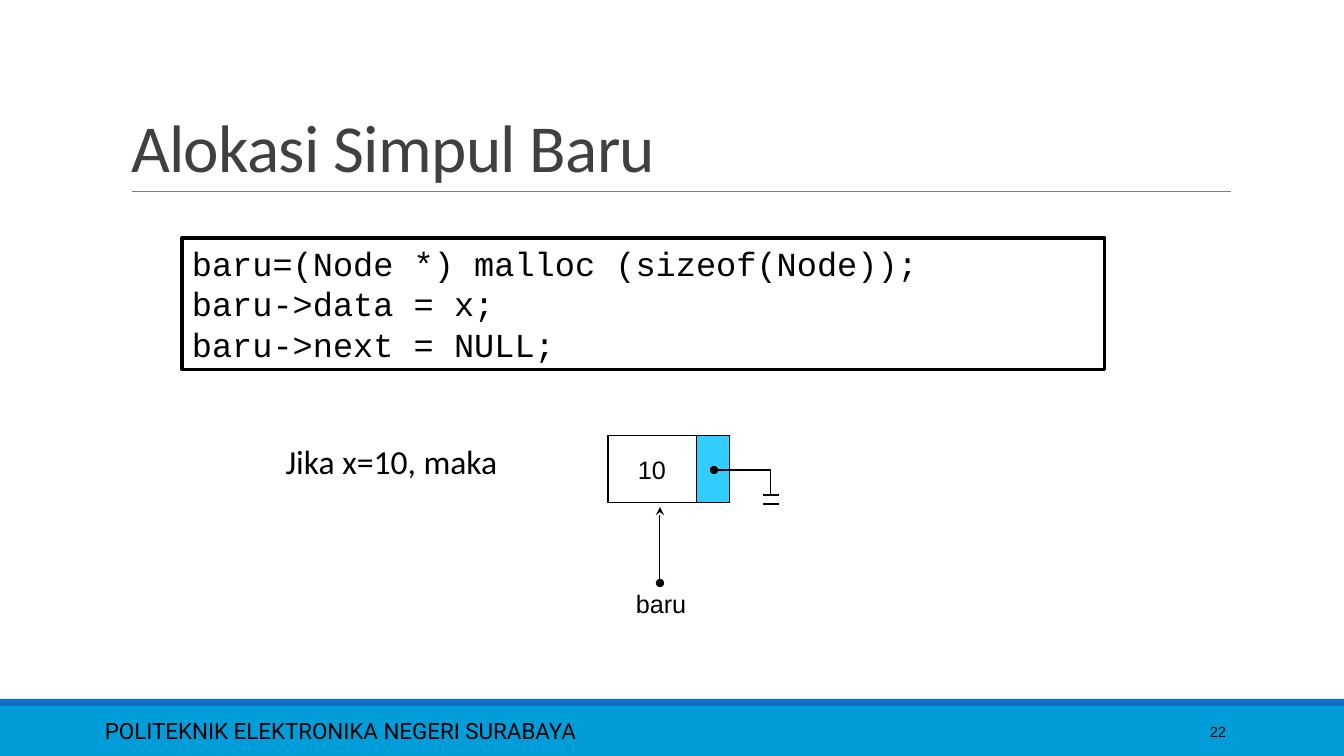
import dataclasses

import pptx
import pptx.dml.color
import pptx.enum.shapes
import pptx.enum.text
import pptx.oxml
import pptx.oxml.ns
import pptx.util

PX = 914400 / 100.8
ALIGN = pptx.enum.text.PP_ALIGN
ANCHOR = pptx.enum.text.MSO_ANCHOR


def px(*lengths):
    """Turn whole pixels into EMU."""
    return [pptx.util.Emu(round(length * PX)) for length in lengths]


def rgb(value):
    return pptx.dml.color.RGBColor.from_string(value)


@dataclasses.dataclass(frozen=True)
class Theme:
    ink: str = "000000"
    title_ink: str = "404040"
    rule: str = "808080"
    footer: str = "009DD9"
    footer_edge: str = "0F6FC6"
    pointer_cell: str = "33CCFF"
    heading_font: str = "Calibri"
    label_font: str = "Arial"
    code_font: str = "Courier New"
    footer_font: str = "Roboto"
    title_size: float = 48
    body_size: float = 24
    label_size: float = 18
    footer_size: float = 16
    number_size: float = 10.5
    thin: float = 0.75
    thick: float = 2.25
    hairline: float = 0.5


class SlideBuilder:
    def __init__(self, slide, theme):
        self.slide = slide
        self.theme = theme
        self.shapes = slide.shapes

    def begin_group(self):
        """Put the elements that follow into a new group."""
        self.shapes = self.slide.shapes.add_group_shape().shapes

    def end_group(self):
        self.shapes = self.slide.shapes

    def set_lines(self, frame, lines, font, size, color=None, align=ALIGN.LEFT, anchor=ANCHOR.TOP):
        frame.word_wrap = True
        frame.auto_size = pptx.enum.text.MSO_AUTO_SIZE.NONE
        frame.vertical_anchor = anchor
        for index, line in enumerate(lines):
            paragraph = frame.paragraphs[0] if index == 0 else frame.add_paragraph()
            paragraph.text = line
            paragraph.alignment = align
            paragraph.font.name = font
            paragraph.font.size = pptx.util.Pt(size)
            paragraph.font.color.rgb = rgb(color or self.theme.ink)

    def title(self, box, text):
        title = self.slide.shapes.title
        title.left, title.top, title.width, title.height = px(*box)
        self.set_lines(title.text_frame, [text], self.theme.heading_font,
                       self.theme.title_size, self.theme.title_ink, anchor=ANCHOR.BOTTOM)
        title.text_frame.paragraphs[0].line_spacing = 0.85
        for run in title.element.iter(pptx.oxml.ns.qn("a:r")):
            run.get_or_add_rPr().set("spc", "-50")

    def text(self, box, text, font, size, **layout):
        frame = self.shapes.add_textbox(*px(*box)).text_frame
        self.set_lines(frame, [text], font, size, **layout)

    def rectangle(self, box, fill=None, line_width=None):
        shape = self.shapes.add_shape(pptx.enum.shapes.MSO_SHAPE.RECTANGLE, *px(*box))
        shape.shadow.inherit = False
        if fill:
            shape.fill.solid()
            shape.fill.fore_color.rgb = rgb(fill)
        else:
            shape.fill.background()
        if line_width:
            shape.line.color.rgb = rgb(self.theme.ink)
            shape.line.width = pptx.util.Pt(line_width)
        else:
            shape.line.fill.background()
        return shape

    def code(self, box, lines):
        shape = self.rectangle(box, line_width=self.theme.thick)
        self.set_lines(shape.text_frame, lines, self.theme.code_font, self.theme.body_size)

    def line(self, start, end, color=None, width=None, head=None, tail=None):
        connector = self.shapes.add_connector(
            pptx.enum.shapes.MSO_CONNECTOR.STRAIGHT, *px(*start, *end))
        connector.line.color.rgb = rgb(color or self.theme.ink)
        connector.line.width = pptx.util.Pt(width or self.theme.thin)
        properties = connector.element.spPr
        outline = properties.find(pptx.oxml.ns.qn("a:ln"))
        namespace = pptx.oxml.ns.nsdecls("a")
        for tag, kind in (("headEnd", head), ("tailEnd", tail)):
            if kind:
                outline.append(pptx.oxml.parse_xml(f'<a:{tag} {namespace} type="{kind}"/>'))
        properties.append(pptx.oxml.parse_xml(f"<a:effectLst {namespace}/>"))


def draw_node(builder):
    """Draw the new node, its NULL pointer and the variable that points to it."""
    theme = builder.theme
    label = dict(font=theme.label_font, size=theme.label_size, align=ALIGN.CENTER)
    top, height, middle = 436, 67, 470
    ground_x, ground_y = 771, 495

    builder.begin_group()
    builder.line((660, 583), (660, 507), head="oval", tail="stealth")
    builder.rectangle((608, top, 89, height), line_width=theme.thin)
    builder.rectangle((697, top, 33, height), theme.pointer_cell, theme.thin)
    builder.text((628, 449, 48, 40), "10", **label)
    builder.line((714, middle), (ground_x, middle), head="oval")
    builder.line((ground_x, middle), (ground_x, ground_y))
    for y in (ground_y, ground_y + 9):
        builder.line((ground_x - 8, y), (ground_x + 8, y))
    builder.text((604, 583, 114, 40), "baru", **label)
    builder.end_group()


def main():
    presentation = pptx.Presentation()
    presentation.slide_width, presentation.slide_height = px(1344, 756)
    theme = Theme()
    builder = SlideBuilder(
        presentation.slides.add_slide(presentation.slide_layouts[5]), theme)

    builder.rectangle((0, 706, 1344, 50), theme.footer)
    builder.rectangle((0, 699, 1344, 7), theme.footer_edge)
    builder.line((132, 191), (1231, 191), theme.rule, theme.hairline)
    builder.text((95, 711, 848, 40), "POLITEKNIK ELEKTRONIKA NEGERI SURABAYA",
                 theme.footer_font, theme.footer_size, anchor=ANCHOR.MIDDLE)
    builder.text((1092, 712, 144, 40), "22", theme.label_font, theme.number_size,
                 align=ALIGN.RIGHT, anchor=ANCHOR.MIDDLE)

    builder.title((121, 31, 1109, 160), "Alokasi Simpul Baru")
    draw_node(builder)
    builder.text((263, 436, 257, 50), "Jika x=10, maka", theme.heading_font,
                 theme.body_size, align=ALIGN.CENTER)
    builder.code((182, 238, 923, 132), [
        "baru=(Node *) malloc (sizeof(Node));",
        "baru->data = x;",
        "baru->next = NULL;",
    ])
    presentation.save("out.pptx")


if __name__ == "__main__":
    main()
